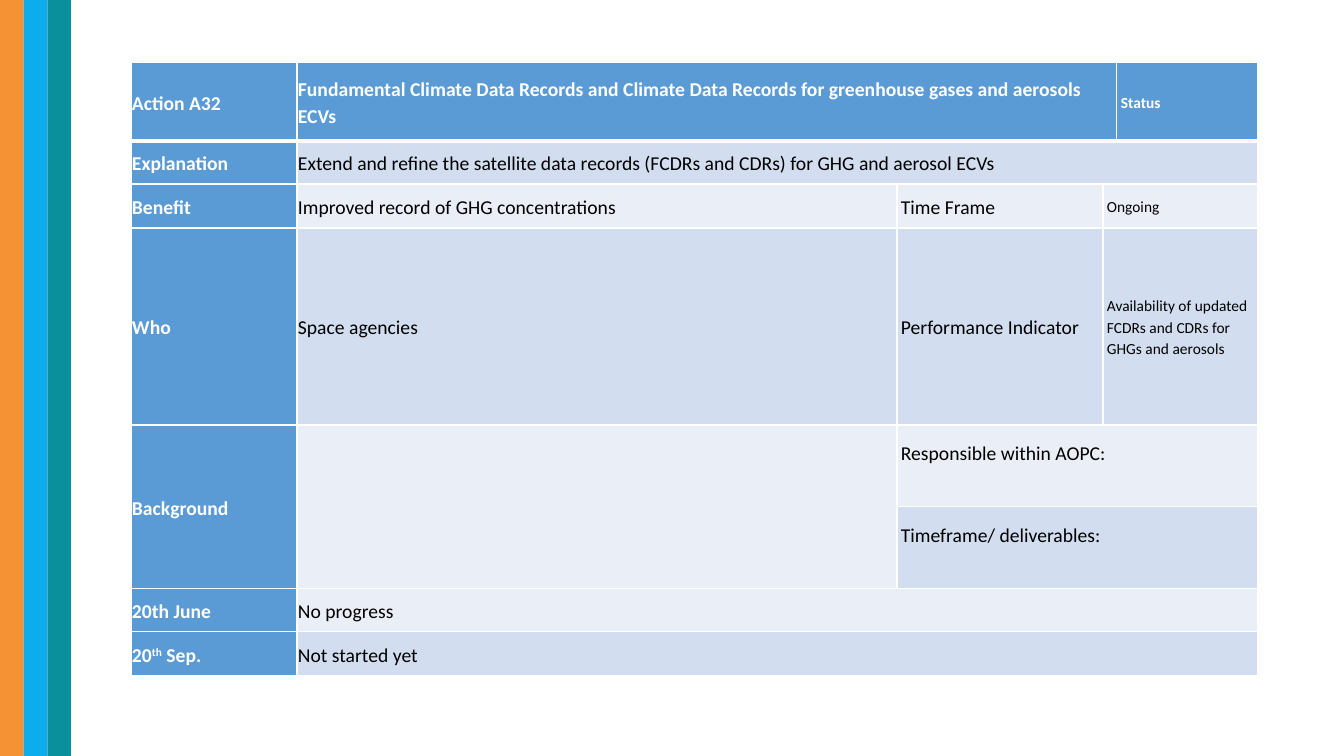
"""Build a climate action status slide with a striped edge and one table."""
from dataclasses import dataclass

from lxml.etree import SubElement
from pptx import Presentation
from pptx.dml.color import RGBColor
from pptx.enum.shapes import MSO_SHAPE
from pptx.enum.text import MSO_ANCHOR
from pptx.oxml.ns import qn
from pptx.util import Pt

SCALE = 914400 / 100.8


@dataclass(frozen=True)
class Theme:
    """Hold the colours and type sizes."""
    font: str = "Calibri"
    stripes: tuple = ("F49234", "0CADEA", "0A8F9D")
    head: str = "5B9BD5"
    bands: tuple = ("EAEFF7", "D2DEEF")
    white: str = "FFFFFF"
    black: str = "000000"
    body: int = 14
    small: int = 11


THEME = Theme()
COLS = (166, 600, 206, 14, 141)
ROWS = (79, 43, 44, 197, 82, 82, 43, 44)
LINE = 27
CELLS = (
    (0, 0, 1, 1, ["Action A32"]),
    (0, 1, 1, 3, ["Fundamental Climate Data Records and Climate Data Records "
                  "for greenhouse gases and aerosols ECVs"]),
    (0, 4, 1, 1, ["Status"]),
    (1, 0, 1, 1, ["Explanation"]),
    (1, 1, 1, 4, ["Extend and refine the satellite data records "
                  "(FCDRs and CDRs) for GHG and aerosol ECVs"]),
    (2, 0, 1, 1, ["Benefit"]),
    (2, 1, 1, 1, ["Improved record of GHG concentrations"]),
    (2, 2, 1, 1, ["Time Frame"]),
    (2, 3, 1, 2, ["Ongoing"]),
    (3, 0, 1, 1, ["Who"]),
    (3, 1, 1, 1, ["Space agencies"]),
    (3, 2, 1, 1, ["Performance Indicator"]),
    (3, 3, 1, 2, ["Availability of updated FCDRs and CDRs for GHGs and aerosols"]),
    (4, 0, 2, 1, ["Background"]),
    (4, 1, 2, 1, []),
    (4, 2, 1, 3, ["Responsible within AOPC:"]),
    (5, 2, 1, 3, ["Timeframe/ deliverables:"]),
    (6, 0, 1, 1, ["20th June"]),
    (6, 1, 1, 4, ["No progress"]),
    (7, 0, 1, 1, ["20", "^th", " Sep."]),
    (7, 1, 1, 4, ["Not started yet"]),
)


def px(num):
    """Turn pixels into EMU."""
    return round(num * SCALE)


def rgb(code):
    """Turn a hex code into a colour."""
    return RGBColor.from_string(code)


def write(frame, parts, *, size, color, bold=False):
    """Write runs into a frame, raising those marked with a caret."""
    para = frame.paragraphs[0]
    para.line_spacing = 1.15
    for part in parts:
        run = para.add_run()
        run.text = part.lstrip("^")
        font = run.font
        font.name, font.size, font.bold = THEME.font, Pt(size), bold
        font.color.rgb = rgb(color)
        if part.startswith("^"):
            run._r.get_or_add_rPr().set("baseline", "30000")


def edge(cell, row):
    """Draw white borders, thick beneath the header row."""
    props = cell._tc.get_or_add_tcPr()
    for side in "LRTB":
        thick = (row, side) in ((0, "B"), (1, "T"))
        line = SubElement(props, qn(f"a:ln{side}"), w=str(Pt(3 if thick else 1)))
        fill = SubElement(line, qn("a:solidFill"))
        SubElement(fill, qn("a:srgbClr"), val=THEME.white)


def style(cell, row, col):
    """Set the borders, fill, margins and anchor of a cell."""
    edge(cell, row)
    cell.fill.solid()
    head = row == 0 or col == 0
    cell.fill.fore_color.rgb = rgb(THEME.head if head else THEME.bands[row % 2])
    cell.margin_left = cell.margin_right = px(1 if col < 2 else 4)
    cell.margin_top = cell.margin_bottom = px(1 if col < 2 else 2)
    cell.vertical_anchor = MSO_ANCHOR.MIDDLE


def stripes(slide, left, top, width, height):
    """Fill a box with equal upright stripes."""
    count = len(THEME.stripes)
    for i, code in enumerate(THEME.stripes):
        start, end = (px(width * k / count) for k in (i, i + 1))
        bar = slide.shapes.add_shape(MSO_SHAPE.RECTANGLE, px(left) + start,
                                     px(top), end - start, px(height))
        bar.shadow.inherit = False
        bar.fill.solid()
        bar.fill.fore_color.rgb = rgb(code)
        bar.line.fill.background()


def grid(slide, left, top, width, height):
    """Place the action table in a box."""
    table = slide.shapes.add_table(len(ROWS), len(COLS), px(left), px(top),
                                   px(width), px(height)).table
    for col, size in zip(table.columns, COLS):
        col.width = px(size)
    for r, size in enumerate(ROWS):
        table.rows[r].height = px(size)
        for c in range(len(COLS)):
            style(table.cell(r, c), r, c)
    for r, c, down, across, parts in CELLS:
        cell = table.cell(r, c)
        if down * across > 1:
            cell.merge(table.cell(r + down - 1, c + across - 1))
        if r in (4, 5) and c == 2:
            cell.margin_bottom = px(2 + LINE)
        head = r == 0 or c == 0
        write(cell.text_frame, parts, bold=head,
              size=THEME.small if c > 2 else THEME.body,
              color=THEME.white if head else THEME.black)


def main():
    """Build and save the slide."""
    deck = Presentation()
    deck.slide_width, deck.slide_height = px(1344), px(756)
    slide = deck.slides.add_slide(deck.slide_layouts[6])
    stripes(slide, 0, 0, 71, 756)
    grid(slide, 131, 62, sum(COLS), sum(ROWS))
    deck.save("out.pptx")


if __name__ == "__main__":
    main()
